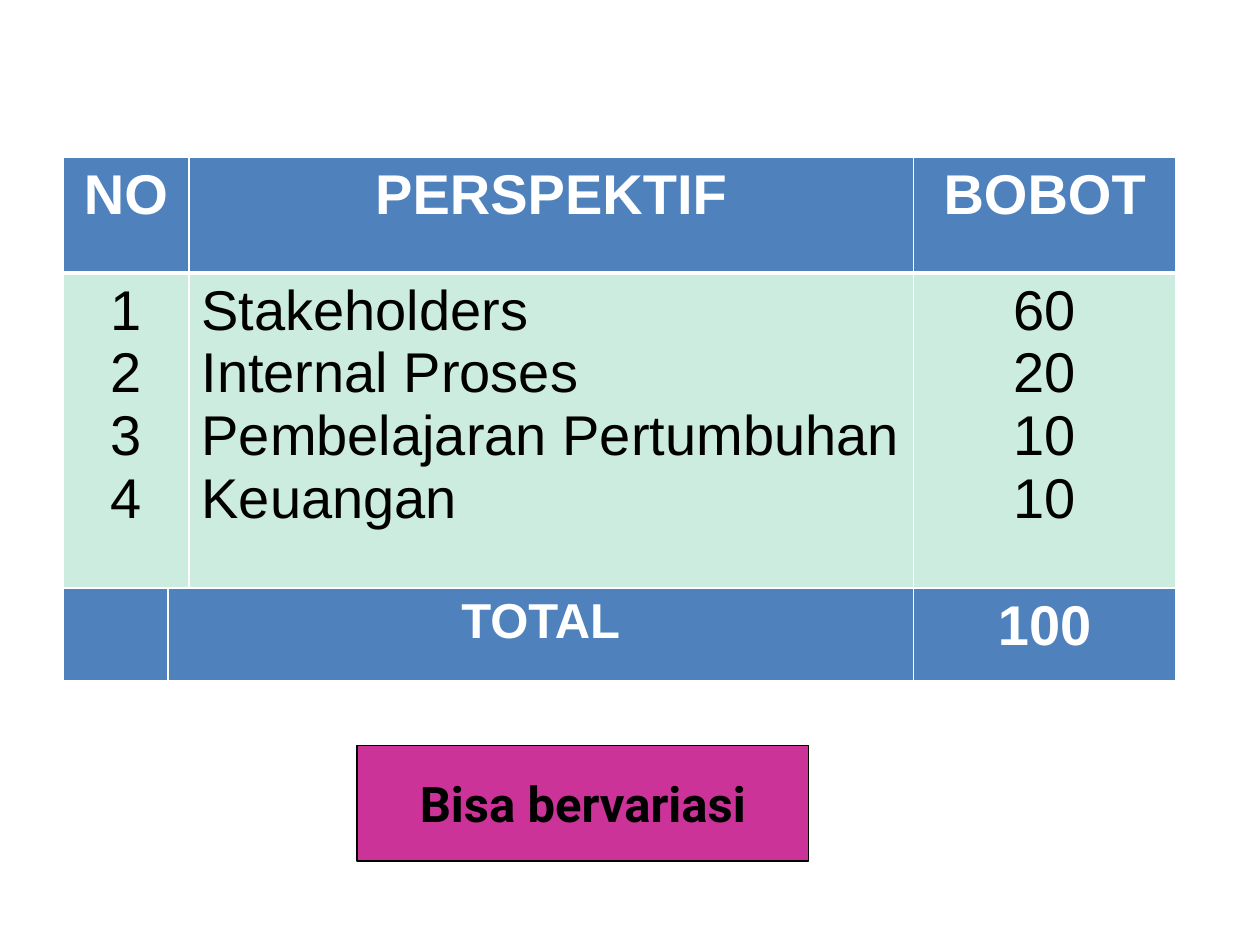
from dataclasses import dataclass

import pptx
import pptx.dml.color
import pptx.enum.shapes
import pptx.enum.text
import pptx.oxml
import pptx.oxml.ns
import pptx.util

RGBColor = pptx.dml.color.RGBColor
PP_ALIGN = pptx.enum.text.PP_ALIGN

WHITE = RGBColor(0xFF, 0xFF, 0xFF)
BLACK = RGBColor(0x00, 0x00, 0x00)
BLUE = RGBColor(0x4F, 0x81, 0xBD)
MINT = RGBColor(0xCB, 0xEC, 0xDE)
MAGENTA = RGBColor(0xCC, 0x33, 0x99)

# The slide is a grid of 120 columns by 90 rows.
SLIDE_W, SLIDE_H = pptx.util.Inches(10), pptx.util.Inches(7.5)
GRID_COLS, GRID_ROWS = 120, 90
TABLE_LEFT = 6


@dataclass(frozen=True)
class Row:
    height: float
    cells: tuple[tuple[str, ...], ...]
    fill: RGBColor
    color: RGBColor
    bold: bool
    aligns: tuple = (PP_ALIGN.CENTER,) * 3
    sizes: tuple[int, ...] = (32, 32, 32)
    top_line: float = 1
    bottom_line: float = 1


@dataclass(frozen=True)
class Table:
    top: float
    widths: tuple[float, ...]
    rows: tuple[Row, ...]


WEIGHTS = Table(15, (12, 69, 25), (
    Row(11, (("NO",), ("PERSPEKTIF",), ("BOBOT",)), BLUE, WHITE, True,
        bottom_line=3),
    Row(33.2, (
        ("1", "2", "3", "4"),
        ("Stakeholders", "Internal Proses", "Pembelajaran Pertumbuhan", "Keuangan"),
        ("60", "20", "10", "10"),
    ), MINT, BLACK, False,
        aligns=(PP_ALIGN.CENTER, PP_ALIGN.LEFT, PP_ALIGN.CENTER), top_line=3),
))
TOTAL = Table(56, (10, 71, 25), (
    Row(9, ((), ("TOTAL",), ("100",)), BLUE, WHITE, True,
        sizes=(32, 28, 32), bottom_line=3),
))


def x(cols: float) -> int:
    return round(SLIDE_W * cols / GRID_COLS)


def y(rows: float) -> int:
    return round(SLIDE_H * rows / GRID_ROWS)


def add_run(p, text: str, font: str, size: int, color: RGBColor, bold: bool) -> None:
    r = p.add_run()
    r.text = text
    r.font.name = font
    r.font.size = pptx.util.Pt(size)
    r.font.bold = bold
    r.font.color.rgb = color


def set_borders(cell, top: float, bottom: float) -> None:
    """Give the cell white borders; widths are in points."""
    tcPr = cell._tc.get_or_add_tcPr()
    sides = (("lnL", 1), ("lnR", 1), ("lnT", top), ("lnB", bottom))
    for i, (tag, width) in enumerate(sides):
        ln = pptx.oxml.parse_xml(
            f'<a:{tag} {pptx.oxml.ns.nsdecls("a")} w="{pptx.util.Pt(width)}">'
            f'<a:solidFill><a:srgbClr val="{WHITE}"/></a:solidFill></a:{tag}>')
        tcPr.insert(i, ln)


def fill_cell(cell, row: Row, col: int) -> None:
    cell.fill.solid()
    cell.fill.fore_color.rgb = row.fill
    set_borders(cell, row.top_line, row.bottom_line)
    tf = cell.text_frame
    for i, text in enumerate(row.cells[col]):
        p = tf.add_paragraph() if i else tf.paragraphs[0]
        p.alignment = row.aligns[col]
        add_run(p, text, "Arial", row.sizes[col], row.color, row.bold)


def add_table(s, spec_table: Table) -> None:
    rows, widths = spec_table.rows, spec_table.widths
    height = sum(row.height for row in rows)
    table = s.shapes.add_table(
        len(rows), len(widths), x(TABLE_LEFT), y(spec_table.top),
        x(sum(widths)), y(height)).table
    for column, width in zip(table.columns, widths):
        column.width = x(width)
    for i, row in enumerate(rows):
        table.rows[i].height = y(row.height)
        for col in range(len(widths)):
            fill_cell(table.cell(i, col), row, col)


def add_note_box(s, text: str) -> None:
    sp = s.shapes.add_shape(
        pptx.enum.shapes.MSO_SHAPE.RECTANGLE, x(34), y(71), x(43), y(11))
    sp.shadow.inherit = False
    sp.fill.solid()
    sp.fill.fore_color.rgb = MAGENTA
    sp.line.color.rgb = BLACK
    sp.line.width = pptx.util.Pt(1)
    tf = sp.text_frame
    tf.word_wrap = True
    tf.vertical_anchor = pptx.enum.text.MSO_ANCHOR.MIDDLE
    p = tf.paragraphs[0]
    p.alignment = PP_ALIGN.CENTER
    add_run(p, text, "Roboto", 28, BLACK, True)


def main() -> None:
    prs = pptx.Presentation()
    prs.slide_width, prs.slide_height = SLIDE_W, SLIDE_H
    s = prs.slides.add_slide(prs.slide_layouts[6])
    add_note_box(s, "Bisa bervariasi")
    for table in (WEIGHTS, TOTAL):
        add_table(s, table)
    prs.save("out.pptx")


if __name__ == "__main__":
    main()
